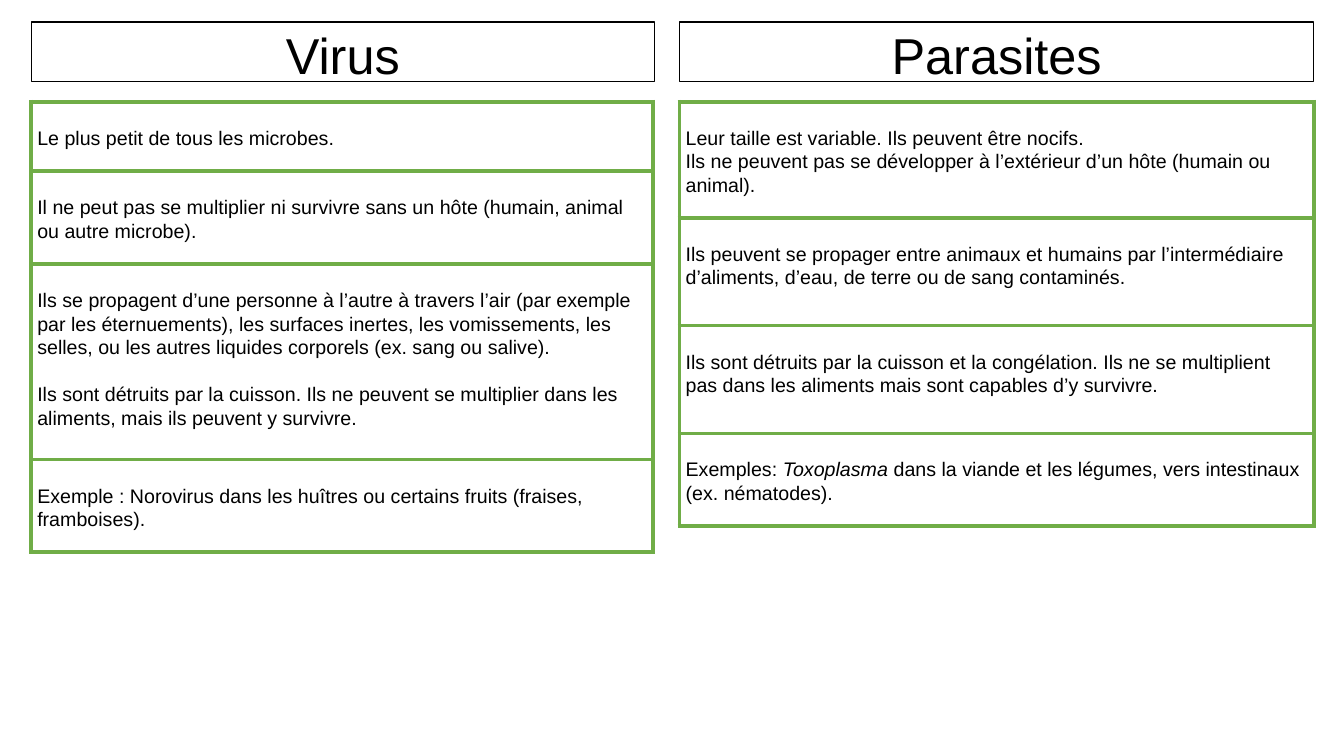
"""Build a slide comparing viruses and parasites."""
from lxml import etree
from pptx import Presentation
from pptx.dml.color import RGBColor
from pptx.enum.shapes import MSO_SHAPE
from pptx.enum.text import MSO_ANCHOR, PP_ALIGN
from pptx.oxml.ns import qn
from pptx.util import Inches, Pt

RECTANGLE = MSO_SHAPE.RECTANGLE
MIDDLE = MSO_ANCHOR.MIDDLE
TOP = MSO_ANCHOR.TOP
CENTER = PP_ALIGN.CENTER
LEFT = PP_ALIGN.LEFT

BLACK, WHITE, GREEN = "000000", "FFFFFF", "70AD47"
FONT = "Arial"
LINE_SPACING = 1.07
HEADING_TOP, HEADING_HEIGHT = 0.22, 0.59
TABLE_TOP = 1.01
BORDER_SIDES = ("a:lnL", "a:lnR", "a:lnT", "a:lnB")

VIRUS_ROWS = [
    (0.69, ["Le plus petit de tous les microbes."]),
    (0.92, ["Il ne peut pas se multiplier ni survivre sans un hôte (humain, animal ou autre microbe)."]),
    (1.94, [
        "Ils se propagent d’une personne à l’autre à travers l’air (par exemple par les "
        "éternuements), les surfaces inertes, les vomissements, les selles, ou les autres "
        "liquides corporels (ex. sang ou salive).",
        "Ils sont détruits par la cuisson. Ils ne peuvent se multiplier dans les aliments, "
        "mais ils peuvent y survivre.",
    ]),
    (0.92, ["Exemple : Norovirus dans les huîtres ou certains fruits (fraises, framboises)."]),
]
PARASITE_ROWS = [
    (1.15, [
        "Leur taille est variable. Ils peuvent être nocifs.",
        "Ils ne peuvent pas se développer à l’extérieur d’un hôte (humain ou animal).",
    ]),
    (1.07, ["Ils peuvent se propager entre animaux et humains par l’intermédiaire d’aliments, "
            "d’eau, de terre ou de sang contaminés."]),
    (1.07, ["Ils sont détruits par la cuisson et la congélation. Ils ne se multiplient pas dans "
            "les aliments mais sont capables d’y survivre."]),
    (0.92, ["Exemples: *Toxoplasma* dans la viande et les légumes, vers intestinaux "
            "(ex. nématodes)."]),
]


def color(hex_value):
    """Return the colour for a hex string."""
    return RGBColor.from_string(hex_value)


def write_paragraph(paragraph, text, size, alignment):
    """Write black text, with the parts between asterisks in italics."""
    paragraph.alignment = alignment
    paragraph.line_spacing = LINE_SPACING
    for index, part in enumerate(text.split("*")):
        run = paragraph.add_run()
        run.text = part
        run.font.name = FONT
        run.font.size = Pt(size)
        run.font.color.rgb = color(BLACK)
        run.font.italic = index % 2 == 1


def add_heading(slide, left, width, text):
    """Add a white heading box with a thin black outline."""
    shape = slide.shapes.add_shape(
        RECTANGLE, Inches(left), Inches(HEADING_TOP), Inches(width), Inches(HEADING_HEIGHT))
    shape.shadow.inherit = False
    shape.fill.solid()
    shape.fill.fore_color.rgb = color(WHITE)
    shape.line.color.rgb = color(BLACK)
    shape.line.width = Pt(1)
    shape.text_frame.word_wrap = True
    shape.text_frame.vertical_anchor = MIDDLE
    paragraph = shape.text_frame.paragraphs[0]
    write_paragraph(paragraph, text, 36, CENTER)
    paragraph.space_after = Pt(8)


def set_borders(cell):
    """Draw a green border on every side of a cell."""
    properties = cell._tc.get_or_add_tcPr()
    for side in BORDER_SIDES:
        line = etree.SubElement(properties, qn(side), w=str(Pt(3)))
        fill = etree.SubElement(line, qn("a:solidFill"))
        etree.SubElement(fill, qn("a:srgbClr"), val=GREEN)


def fill_cell(cell, texts, gap):
    """Style a cell and write its paragraphs, separated by a gap in points."""
    set_borders(cell)
    cell.fill.solid()
    cell.fill.fore_color.rgb = color(WHITE)
    cell.margin_left = cell.margin_right = Inches(0.06)
    cell.margin_top = Inches(0.24)
    cell.margin_bottom = Inches(0)
    cell.vertical_anchor = TOP
    for index, text in enumerate(texts):
        paragraph = cell.text_frame.paragraphs[0] if index == 0 else cell.text_frame.add_paragraph()
        write_paragraph(paragraph, text, 14, LEFT)
        paragraph.space_before = Pt(gap if index else 0)


def add_fact_table(slide, left, width, rows, gap):
    """Add a one-column table of facts."""
    height = sum(row_height for row_height, _ in rows)
    table = slide.shapes.add_table(
        len(rows), 1, Inches(left), Inches(TABLE_TOP), Inches(width), Inches(height)).table
    table.first_row = False
    table.horz_banding = False
    for index, (row_height, texts) in enumerate(rows):
        table.rows[index].height = Inches(row_height)
        fill_cell(table.cell(index, 0), texts, gap)


def main():
    """Build and save the slide."""
    presentation = Presentation()
    presentation.slide_width = Inches(13.33)
    presentation.slide_height = Inches(7.5)
    slide = presentation.slides.add_slide(presentation.slide_layouts[6])
    add_heading(slide, 0.31, 6.18, "Virus")
    add_fact_table(slide, 0.31, 6.17, VIRUS_ROWS, 17)
    add_heading(slide, 6.74, 6.29, "Parasites")
    add_fact_table(slide, 6.74, 6.29, PARASITE_ROWS, 0)
    presentation.save("out.pptx")


if __name__ == "__main__":
    main()
